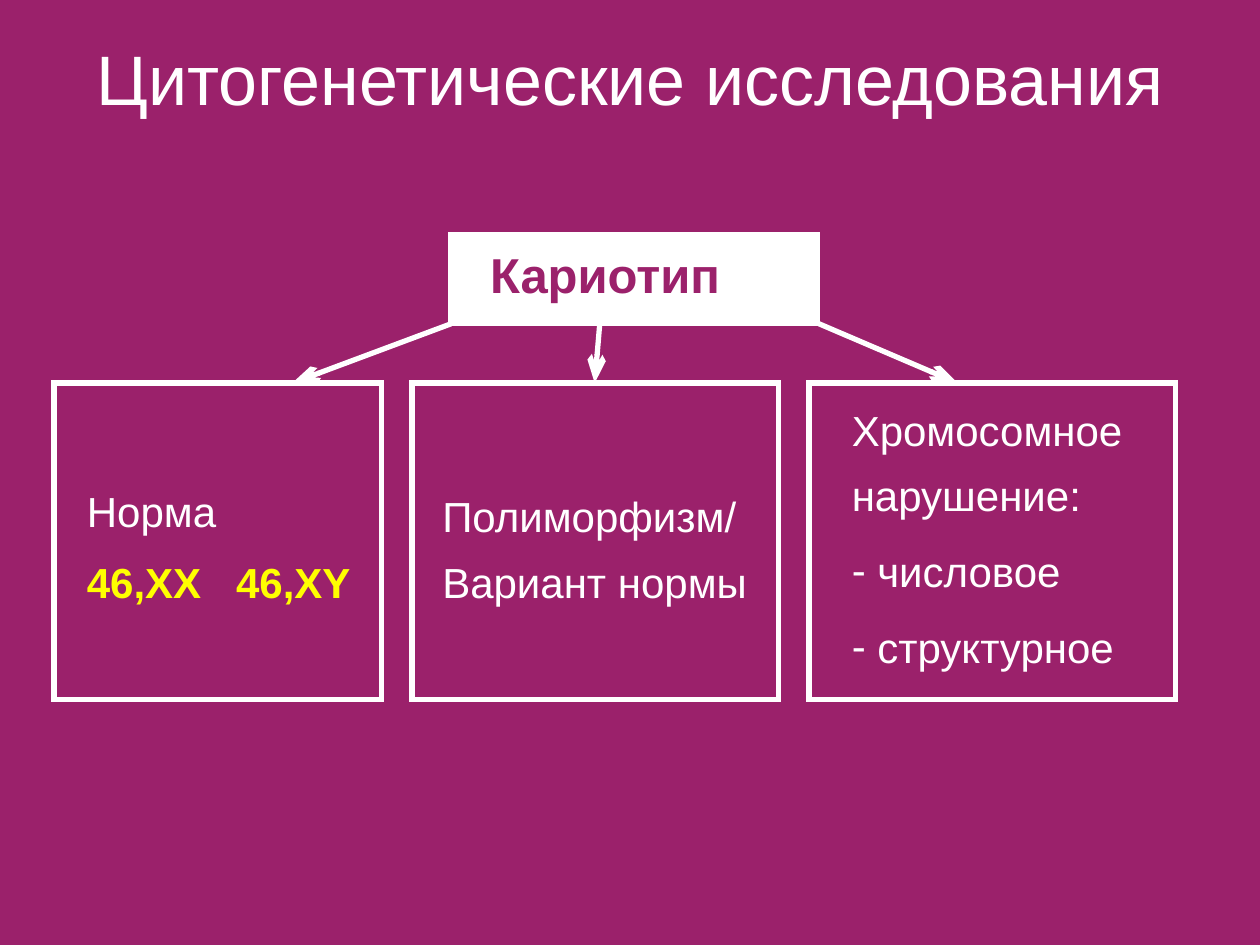
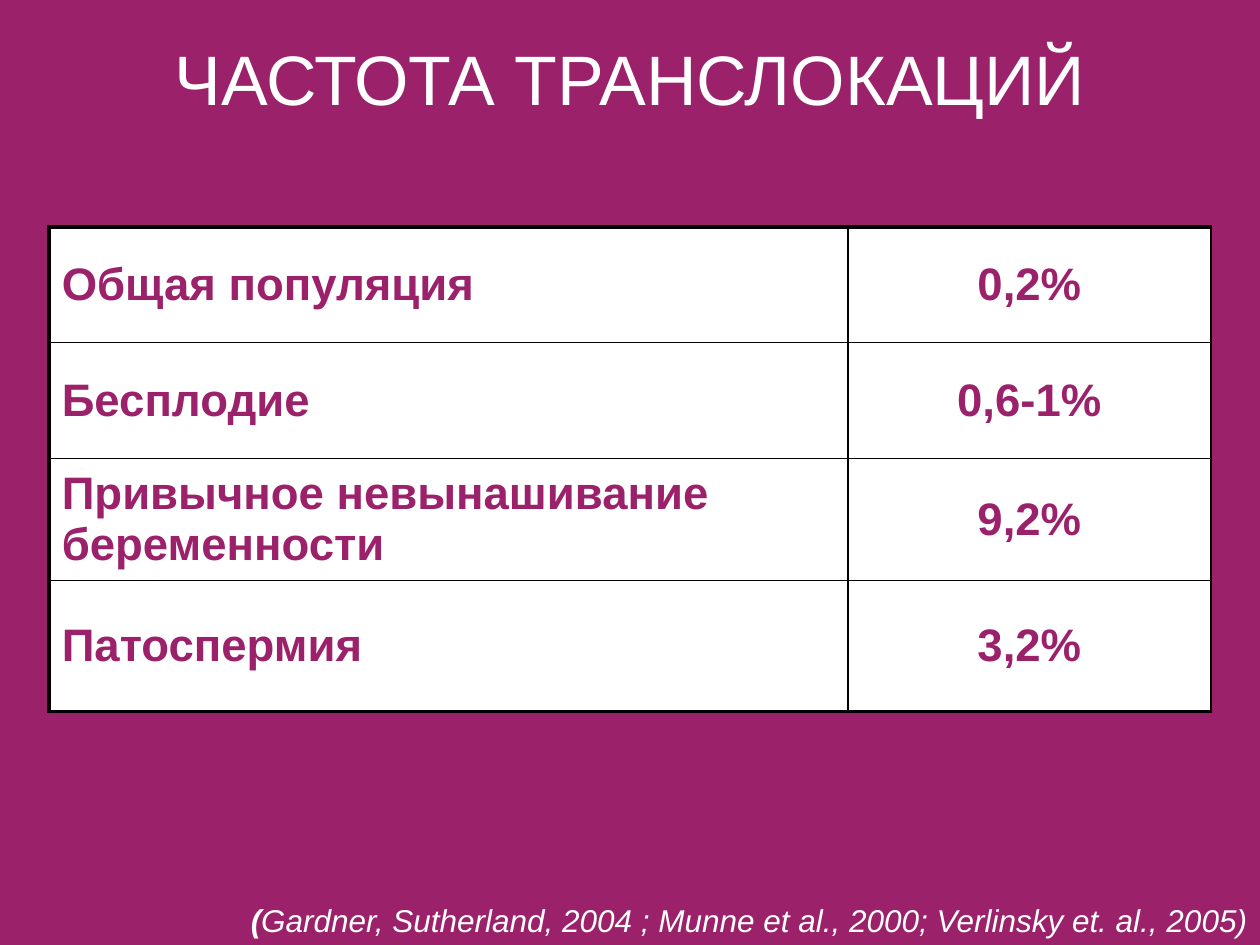
from lxml import etree
from pptx import Presentation
from pptx import util as u
from pptx.dml.color import RGBColor
from pptx.enum import shapes, text as t
from pptx.oxml.ns import qn

COLORS = {"plum": "9B216B", "white": "FFFFFF", "yellow": "FFFF00", "black": "000000"}
FONT = "Arial"
THIN, THICK = 1, 2.25
LEFT, CENTER, RIGHT, JUSTIFY = (
    t.PP_ALIGN.LEFT, t.PP_ALIGN.CENTER, t.PP_ALIGN.RIGHT, t.PP_ALIGN.JUSTIFY)


def rgb(name):
    """Return the named palette colour."""
    return RGBColor.from_string(COLORS[name])


def write(frame, words, paragraph=None, size=24, color="white", bold=False, italic=False,
          align=JUSTIFY, spacing=1.0, before=0, bullet=None):
    """Write words into a given, an empty first or a new paragraph; \\v breaks a line."""
    if paragraph is None:
        first = frame.paragraphs[0]
        paragraph = frame.add_paragraph() if first.runs else first
        paragraph.alignment = align
        paragraph.line_spacing = spacing
        paragraph.space_before = u.Pt(before)
        if bullet:
            properties = paragraph._p.get_or_add_pPr()
            etree.SubElement(properties, qn("a:buFont")).set("typeface", FONT)
            etree.SubElement(properties, qn("a:buChar")).set("char", bullet)
    for number, line in enumerate(words.split("\v")):
        if number:
            paragraph.add_line_break()
        run = paragraph.add_run()
        run.text = line
        font = run.font
        font.name, font.size, font.bold, font.italic = FONT, u.Pt(size), bold, italic
        font.color.rgb = rgb(color)
    return paragraph


def add_text_box(slide, left, top, width, height):
    """Add a wrapping text box and return its text frame."""
    shape = slide.shapes.add_textbox(*map(u.Inches, (left, top, width, height)))
    shape.text_frame.word_wrap = True
    return shape.text_frame


def add_slide(presentation, title):
    """Add a plum slide with its centred title."""
    slide = presentation.slides.add_slide(presentation.slide_layouts[6])
    slide.background.fill.solid()
    slide.background.fill.fore_color.rgb = rgb("plum")
    frame = add_text_box(slide, 0.08, 0, 9.84, 1.18)
    frame.vertical_anchor = t.MSO_ANCHOR.MIDDLE
    frame.margin_left = frame.margin_right = frame.margin_bottom = 0
    write(frame, title, size=40, align=CENTER)
    return slide


def add_box(slide, left, top, width, height, inset, fill=None, anchor=t.MSO_ANCHOR.MIDDLE):
    """Add a white-edged rectangle and return its text frame."""
    shape = slide.shapes.add_shape(
        shapes.MSO_SHAPE.RECTANGLE, *map(u.Inches, (left, top, width, height)))
    shape.shadow.inherit = False
    if fill:
        shape.fill.solid()
        shape.fill.fore_color.rgb = rgb(fill)
    else:
        shape.fill.background()
    shape.line.color.rgb = rgb("white")
    shape.line.width = u.Pt(3)
    etree.SubElement(shape.line._get_or_add_ln(), qn("a:miter")).set("lim", "800000")
    frame = shape.text_frame
    frame.word_wrap = True
    frame.margin_left = u.Inches(inset)
    frame.vertical_anchor = anchor
    return frame


def add_arrow(slide, start, end):
    """Add a white arrow between two points."""
    arrow = slide.shapes.add_connector(
        shapes.MSO_CONNECTOR.STRAIGHT, *map(u.Inches, (*start, *end)))
    arrow.line.color.rgb = rgb("white")
    arrow.line.width = u.Pt(3)
    head = etree.SubElement(arrow.line._get_or_add_ln(), qn("a:tailEnd"))
    head.set("type", "arrow")
    head.set("len", "lg")
    etree.SubElement(arrow._element.spPr, qn("a:effectLst"))


def set_borders(cell, **widths):
    """Give a cell black borders, by side L, R, T and B."""
    properties = cell._tc.get_or_add_tcPr()
    for position, side in enumerate("LRTB"):
        line = etree.Element(qn(f"a:ln{side}"), w=str(u.Pt(widths[side])))
        fill = etree.SubElement(line, qn("a:solidFill"))
        etree.SubElement(fill, qn("a:srgbClr")).set("val", COLORS["black"])
        properties.insert(position, line)


def add_table(slide, left, top, column_widths, row_heights, rows):
    """Add a white table with a label and a value in each row."""
    table = slide.shapes.add_table(
        len(rows), len(column_widths),
        *map(u.Inches, (left, top, sum(column_widths), sum(row_heights)))).table
    table.first_row = table.horz_banding = False
    for column, width in zip(table.columns, column_widths):
        column.width = u.Inches(width)
    for row_index, (values, height) in enumerate(zip(rows, row_heights)):
        table.rows[row_index].height = u.Inches(height)
        for column_index, value in enumerate(values):
            cell = table.cell(row_index, column_index)
            cell.fill.solid()
            cell.fill.fore_color.rgb = rgb("white")
            cell.vertical_anchor = t.MSO_ANCHOR.MIDDLE
            write(cell.text_frame, value, size=26, color="plum", bold=True,
                  align=CENTER if column_index else LEFT)
            set_borders(cell, L=THIN if column_index else THICK, R=THIN,
                        T=THIN if row_index else THICK,
                        B=THICK if row_index == len(rows) - 1 else THIN)


def build_karyotype(presentation):
    """Build the slide that splits the karyotype into three outcomes."""
    slide = add_slide(presentation, "Цитогенетические исследования")
    karyotype = add_box(slide, 3.58, 1.86, 2.91, 0.71, inset=0.31, fill="white")
    write(karyotype, "Кариотип ", size=28, color="plum", bold=True,
          spacing=0.8, before=5.6)

    top, height = 3.04, 2.51
    norm = add_box(slide, 0.43, top, 2.6, height, inset=0.26)
    write(norm, "Норма ", spacing=1.2, before=6)
    write(norm, "46,XX   46,XY", color="yellow", bold=True, spacing=1.2, before=6)

    variant = add_box(slide, 3.27, top, 2.91, height, inset=0.24)
    write(variant, "Полиморфизм/\vВариант нормы", spacing=1.3)

    disorder = add_box(slide, 6.42, top, 2.91, height, inset=0.34, anchor=t.MSO_ANCHOR.TOP)
    write(disorder, "Хромосомное\vнарушение:", spacing=1.3, before=6)
    for kind in (" числовое", " структурное"):
        write(disorder, kind, spacing=1.3, before=6, bullet="-")

    for start, end in ((3.58, 2.32), (4.76, 4.72), (6.5, 7.6)):
        add_arrow(slide, (start, 2.57), (end, top))


def build_frequency(presentation):
    """Build the slide with the table of translocation frequencies."""
    slide = add_slide(presentation, "ЧАСТОТА ТРАНСЛОКАЦИЙ")
    add_table(slide, 0.39, 1.8, (6.34, 2.88), (0.92, 0.92, 0.96, 1.04), (
        ("Общая популяция", "0,2%"),
        ("Бесплодие", "0,6-1%"),
        ("Привычное невынашивание беременности", "9,2%"),
        ("Патоспермия", "3,2%"),
    ))
    sources = add_text_box(slide, 0.98, 7.1, 9.02, 0.4)
    paragraph = write(sources, "(", size=18, bold=True, italic=True, align=RIGHT)
    write(sources, "Gardner, Sutherland, 2004 ; Munne et al., 2000; Verlinsky et. al., 2005)",
          paragraph=paragraph, size=18, italic=True)


def main():
    """Build and save the presentation."""
    presentation = Presentation()
    presentation.slide_width, presentation.slide_height = u.Inches(10), u.Inches(7.5)
    build_karyotype(presentation)
    build_frequency(presentation)
    presentation.save("out.pptx")


if __name__ == "__main__":
    main()
